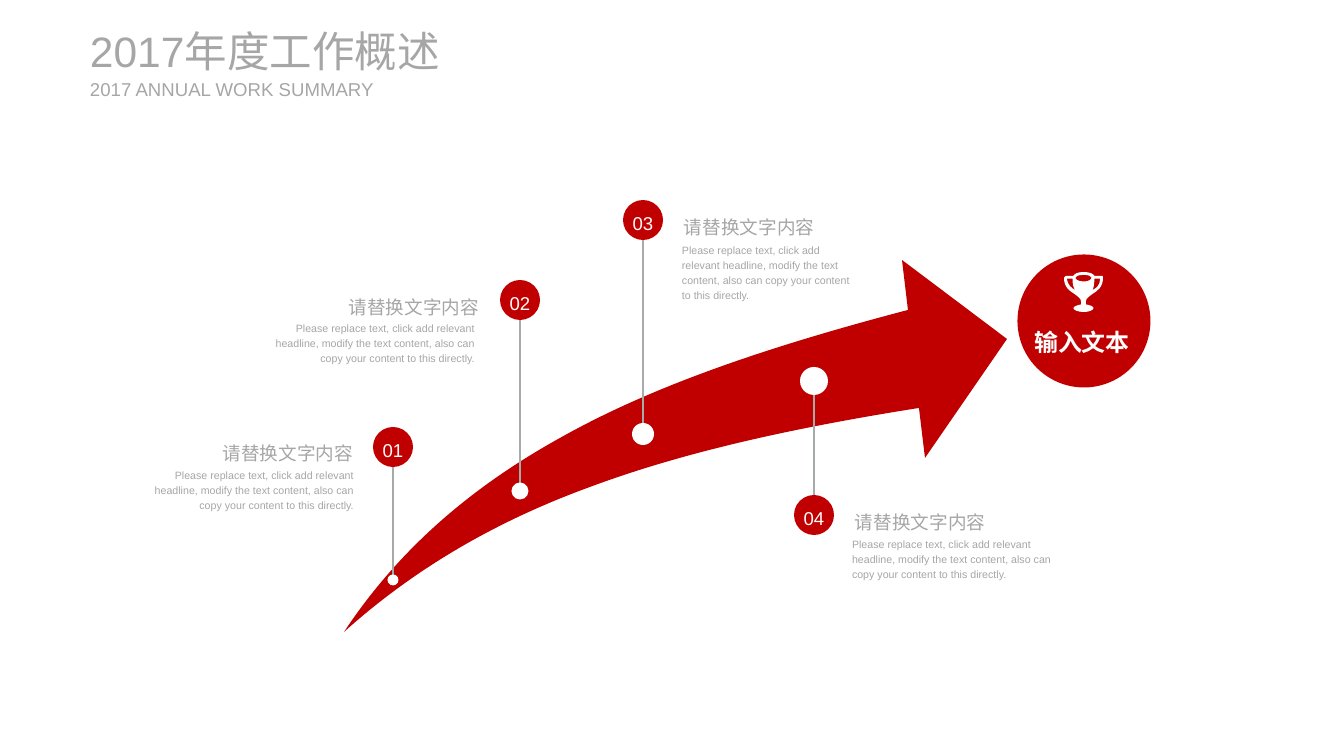
from lxml import etree
from pptx import Presentation
from pptx.dml.color import RGBColor
from pptx.enum.shapes import MSO_CONNECTOR, MSO_SHAPE
from pptx.enum.text import MSO_ANCHOR, PP_ALIGN
from pptx.oxml.ns import qn
from pptx.util import Emu, Pt

LEFT, CENTER, RIGHT = PP_ALIGN.LEFT, PP_ALIGN.CENTER, PP_ALIGN.RIGHT
TOP, MIDDLE = MSO_ANCHOR.TOP, MSO_ANCHOR.MIDDLE
OVAL = MSO_SHAPE.OVAL
STRAIGHT = MSO_CONNECTOR.STRAIGHT

RED = RGBColor(0xC0, 0x00, 0x00)
WHITE = RGBColor(0xFF, 0xFF, 0xFF)
NUMBER_WHITE = RGBColor(0xFC, 0xFC, 0xFC)
GRAY = RGBColor(0xA6, 0xA6, 0xA6)
STEM_GRAY = RGBColor(0xA6, 0xAA, 0xA9)

FONT = "Arial"
EMU_PER_PX = 9565
SLIDE_WIDTH, SLIDE_HEIGHT = 1344, 756
BADGE_SIZE = 40

TITLE = ("2017年度工作概述", (90, 25, 413, 52))
SUBTITLE = ("2017 ANNUAL WORK SUMMARY", (90, 78, 293, 23))
STEP_HEADING = "请替换文字内容"
STEP_BODY = (
    "Please replace text, click add relevant headline, modify the text content, "
    "also can copy your content to this directly."
)
# number, centre x, badge y, dot y, dot size, heading box, body box, alignment
STEPS = [
    ("01", 393, 447, 580, 11, (201, 438, 152, 25), (138, 466, 216, 45), RIGHT),
    ("02", 520, 300, 491, 17, (315, 292, 164, 25), (259, 319, 216, 45), RIGHT),
    ("03", 643, 220, 434, 22, (684, 211, 141, 27), (682, 241, 179, 60), LEFT),
    ("04", 814, 515, 381, 28, (855, 506, 141, 27), (852, 535, 216, 45), LEFT),
]
GOAL = ("输入文本", (1033, 318, 98, 39))
GOAL_CENTER, GOAL_SIZE = (1084, 321), 133

# A contour is a list of segments: one point is a corner, three points are a curve.
ARROW = [[
    [(344, 632)],
    [(397, 552), (468, 489), (560, 438)],
    [(654, 385), (771, 346), (908, 310)],
    [(902, 260)], [(1007, 339)], [(925, 458)], [(919, 408)],
    [(793, 428), (684, 452), (590, 487)],
    [(494, 522), (413, 570), (344, 632)],
]]
TROPHY_BOX = (1064, 272, 39, 40)
TROPHY_GRID = (41, 42)
TROPHY = [
    [[(3, 7)], [(9, 7)], [(9, 13), (10, 17), (12, 19)], [(8, 17), (4, 14), (3, 7)]],
    [
        [(21, 3)],
        [(27, 3), (29, 5), (29, 6)], [(29, 7), (27, 10), (21, 10)],
        [(14, 10), (12, 7), (12, 6)], [(12, 5), (14, 3), (21, 3)],
    ],
    [[(30, 19)], [(31, 17), (32, 13), (32, 7)], [(38, 7)], [(38, 14), (34, 17), (30, 19)]],
    [
        [(23, 31)],
        [(23, 28), (26, 26), (30, 23)], [(35, 20), (41, 16), (41, 6)],
        [(41, 5), (41, 4), (40, 4)], [(32, 4)],
        [(31, 2), (27, 0), (21, 0)], [(14, 0), (11, 2), (10, 4)], [(2, 4)],
        [(1, 4), (0, 5), (0, 6)], [(0, 16), (6, 20), (11, 23)],
        [(15, 26), (18, 28), (18, 31)], [(18, 34)],
        [(14, 35), (10, 36), (10, 38)], [(10, 40), (15, 42), (21, 42)],
        [(26, 42), (31, 40), (31, 38)], [(31, 36), (28, 35), (23, 34)],
    ],
]


def px(length):
    return Emu(round(length * EMU_PER_PX))


def format_text(shape, text, size, color, align, anchor, line_spacing=1.0, bold=False):
    frame = shape.text_frame
    frame.word_wrap = True
    frame.vertical_anchor = anchor
    frame.margin_left = frame.margin_right = frame.margin_top = frame.margin_bottom = 0
    frame.text = text
    paragraph = frame.paragraphs[0]
    paragraph.alignment = align
    paragraph.line_spacing = line_spacing
    run = paragraph.runs[0]
    run.font.name = FONT
    run.font.size = Pt(size)
    run.font.bold = bold
    run.font.color.rgb = color
    east_asian = etree.SubElement(run._r.get_or_add_rPr(), qn("a:ea"))
    east_asian.set("typeface", FONT)


def add_text(slide, text, box, *style, **options):
    format_text(slide.shapes.add_textbox(*map(px, box)), text, *style, **options)


def paint(shape, color):
    shape.shadow.inherit = False
    shape.fill.solid()
    shape.fill.fore_color.rgb = color
    shape.line.fill.background()


def add_circle(slide, center_x, center_y, size, color):
    left, top = center_x - size / 2, center_y - size / 2
    circle = slide.shapes.add_shape(OVAL, px(left), px(top), px(size), px(size))
    paint(circle, color)
    return circle


def add_stem(slide, x, start_y, end_y):
    stem = slide.shapes.add_connector(STRAIGHT, px(x), px(start_y), px(x), px(end_y))
    stem.line.color.rgb = STEM_GRAY
    stem.line.width = Pt(1)
    etree.SubElement(stem._element.spPr, qn("a:effectLst"))


def bend_curves(shape, contours):
    """Merge the three straight lines of each curve segment into one cubic curve."""
    lines = iter(list(shape._element.iter(qn("a:lnTo"))))
    for contour in contours:
        for segment in contour[1:]:
            curve = next(lines)
            if len(segment) == 1:
                continue
            curve.tag = qn("a:cubicBezTo")
            for _ in segment[1:]:
                line = next(lines)
                curve.append(line[0])
                line.getparent().remove(line)


def add_outline(slide, contours, color, origin=(0, 0), scale=(1, 1)):
    builder = None
    for contour in contours:
        points = [
            tuple(px(origin[axis] + point[axis] * scale[axis]) for axis in (0, 1))
            for segment in contour
            for point in segment
        ]
        if builder is None:
            builder = slide.shapes.build_freeform(*points[0])
        else:
            builder.move_to(*points[0])
        builder.add_line_segments(points[1:], close=True)
    outline = builder.convert_to_shape()
    bend_curves(outline, contours)
    paint(outline, color)


def add_step(slide, number, x, badge_y, dot_y, dot_size, heading_box, body_box, align):
    add_stem(slide, x, badge_y, dot_y)
    badge = add_circle(slide, x, badge_y, BADGE_SIZE, RED)
    format_text(badge, number, 14, NUMBER_WHITE, CENTER, MIDDLE, 1.2)
    badge.text_frame.margin_top = px(2)
    add_circle(slide, x, dot_y, dot_size, WHITE)
    add_text(slide, STEP_HEADING, heading_box, 14, GRAY, align, MIDDLE, 1.2)
    add_text(slide, STEP_BODY, body_box, 8, GRAY, align, TOP, 1.2)


def add_goal(slide):
    add_circle(slide, *GOAL_CENTER, GOAL_SIZE, RED)
    left, top, width, height = TROPHY_BOX
    scale = (width / TROPHY_GRID[0], height / TROPHY_GRID[1])
    add_outline(slide, TROPHY, WHITE, (left, top), scale)
    add_text(slide, *GOAL, 18, WHITE, CENTER, MIDDLE, 1.3, bold=True)


def main():
    presentation = Presentation()
    presentation.slide_width = px(SLIDE_WIDTH)
    presentation.slide_height = px(SLIDE_HEIGHT)
    slide = presentation.slides.add_slide(presentation.slide_layouts[6])
    add_text(slide, *TITLE, 32, GRAY, LEFT, MIDDLE)
    add_text(slide, *SUBTITLE, 14, GRAY, LEFT, MIDDLE)
    add_outline(slide, ARROW, RED)
    for step in STEPS:
        add_step(slide, *step)
    add_goal(slide)
    presentation.save("out.pptx")


if __name__ == "__main__":
    main()
